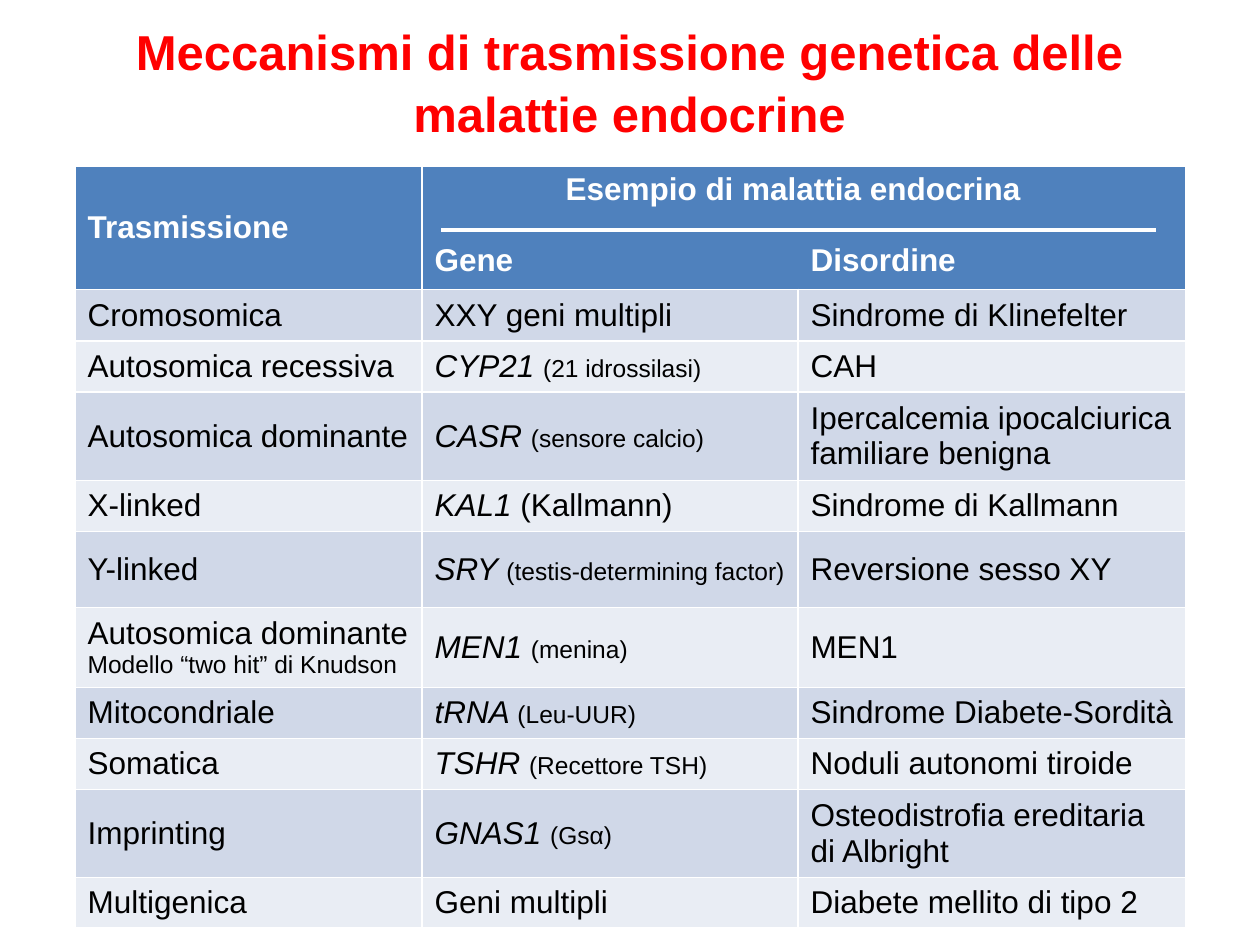
from lxml import etree
from pptx import Presentation, util as u
from pptx.dml.color import RGBColor
from pptx.enum import shapes, text
from pptx.oxml.ns import qn

PX = 914400 / 126
RED = RGBColor(0xFF, 0, 0)
WHITE = RGBColor(0xFF, 0xFF, 0xFF)
BLACK = RGBColor(0, 0, 0)
BLUE = RGBColor(0x4F, 0x81, 0xBD)
BANDS = [RGBColor(0xD0, 0xD8, 0xE8), RGBColor(0xE9, 0xED, 0xF4)]

# Row height, transmission lines, gene, gene note, note size, disorder
ROWS = [
    (52, ["Cromosomica"], "XXY geni multipli", "", 18, "Sindrome di Klinefelter"),
    (51, ["Autosomica recessiva"], "CYP21 ", "(21 idrossilasi)", 14, "CAH"),
    (83, ["Autosomica dominante"], "CASR ", "(sensore calcio)", 14,
     "Ipercalcemia ipocalciurica familiare benigna"),
    (51, ["X-linked"], "KAL1", " (Kallmann)", 18, "Sindrome di Kallmann"),
    (76, ["Y-linked"], "SRY ", "(testis-determining factor)", 14, "Reversione sesso XY"),
    (75, ["Autosomica dominante", "Modello “two hit” di Knudson"],
     "MEN1 ", "(menina)", 14, "MEN1"),
    (51, ["Mitocondriale"], "tRNA ", "(Leu-UUR)", 14, "Sindrome Diabete-Sordità"),
    (51, ["Somatica"], "TSHR ", "(Recettore TSH)", 14, "Noduli autonomi tiroide"),
    (83, ["Imprinting"], "GNAS1 ", "(Gsα)", 14, "Osteodistrofia ereditaria di Albright"),
    (50, ["Multigenica"], "Geni multipli", "", 18, "Diabete mellito di tipo 2"),
]
COLS = [347, 376, 388]
HEAD = 117


def px(n):
    """Turn pixels into EMU."""
    return u.Emu(int(n * PX))


def put(par, words, size=18, color=BLACK, bold=False, italic=False):
    """Add a formatted run to a paragraph."""
    run = par.add_run()
    run.text = words
    font = run.font
    font.name, font.size = "Arial", u.Pt(size)
    font.bold, font.italic = bold, italic
    font.color.rgb = color


prs = Presentation()
prs.slide_width, prs.slide_height = px(1260), px(945)
slide = prs.slides.add_slide(prs.slide_layouts[6])

# Title
title = slide.shapes.add_textbox(px(94), px(16), px(1071), px(129)).text_frame
title.word_wrap = True
title.vertical_anchor = text.MSO_ANCHOR.MIDDLE
par = title.paragraphs[0]
par.alignment = text.PP_ALIGN.CENTER
par.line_spacing = 1.05
put(par, "Meccanismi di trasmissione genetica delle malattie endocrine", 28, RED, True)

# Table grid
high = HEAD + sum(row[0] for row in ROWS)
table = slide.shapes.add_table(len(ROWS) + 1, 3, px(75), px(166),
                               px(sum(COLS)), px(high)).table
for col, wide in zip(table.columns, COLS):
    col.width = px(wide)
for row, tall in zip(table.rows, [HEAD] + [row[0] for row in ROWS]):
    row.height = px(tall)
for r, row in enumerate(table.rows):
    for cell in row.cells:
        cell.fill.solid()
        cell.fill.fore_color.rgb = BANDS[(r - 1) % 2] if r else BLUE
        cell.vertical_anchor = text.MSO_ANCHOR.MIDDLE

# Header
put(table.cell(0, 0).text_frame.paragraphs[0], "Trasmissione", 18, WHITE, True)
head = table.cell(0, 1)
head.merge(table.cell(0, 2))
head.vertical_anchor = text.MSO_ANCHOR.TOP
top = head.text_frame.paragraphs[0]
put(top, "Esempio di malattia endocrina", 18, WHITE, True)
top._p.get_or_add_pPr().set("marL", str(px(131)))
sub = head.text_frame.add_paragraph()
sub.space_before = u.Pt(20)
put(sub, "Gene\tDisordine", 18, WHITE, True)
tabs = etree.SubElement(sub._p.get_or_add_pPr(), qn("a:tabLst"))
etree.SubElement(tabs, qn("a:tab"), pos=str(px(COLS[1])), algn="l")

# Body
for r, (_, kinds, gene, note, size, illness) in enumerate(ROWS, 1):
    frames = [table.cell(r, c).text_frame for c in range(3)]
    put(frames[0].paragraphs[0], kinds[0])
    for more in kinds[1:]:
        put(frames[0].add_paragraph(), more, 14)
    par = frames[1].paragraphs[0]
    put(par, gene, italic=bool(note))
    if note:
        put(par, note, size)
    put(frames[2].paragraphs[0], illness)

# Rule under the shared heading
rule = slide.shapes.add_connector(shapes.MSO_CONNECTOR.STRAIGHT,
                                  px(441), px(230), px(1156), px(230))
rule.line.color.rgb = WHITE
rule.line.width = u.Pt(2.25)
etree.SubElement(rule._element.spPr, qn("a:effectLst"))

prs.save("out.pptx")
